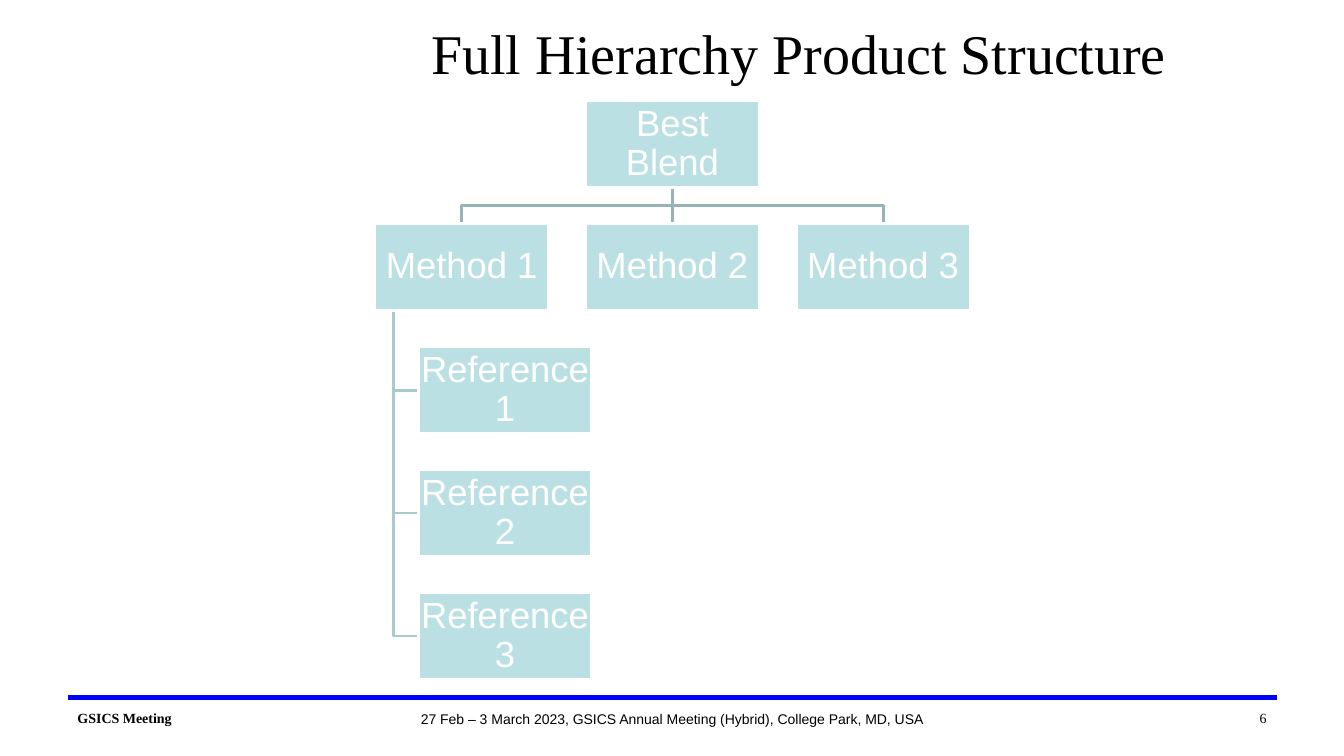
from dataclasses import dataclass

from lxml.etree import SubElement
from pptx import Presentation
from pptx.dml.color import RGBColor
from pptx.enum.shapes import MSO_CONNECTOR as Connector, MSO_SHAPE as Shape
from pptx.enum.text import MSO_ANCHOR as Anchor, PP_ALIGN as Align
from pptx.oxml.ns import qn
from pptx.util import Inches, Pt


@dataclass(frozen=True)
class Theme:
    """Colours, fonts and type sizes of the slide."""
    ink: str = "000000"
    white: str = "FFFFFF"
    box: str = "BBE0E3"
    method_link: str = "96B3B6"
    reference_link: str = "AACBCE"
    rule: str = "0000FF"
    serif: str = "Times New Roman"
    sans: str = "Arial"
    title_size: int = 40
    box_size: int = 26
    footer_size: int = 10
    link_width: int = 2
    rule_width: int = 3


class HierarchySlide:
    """Draws the elements of a hierarchy on one slide."""

    def __init__(self, slide, theme):
        self.shapes = slide.shapes
        self.theme = theme

    def add_words(self, frame, words, size, font, color, align, bold=False):
        frame.word_wrap = True
        frame.vertical_anchor = Anchor.MIDDLE
        paragraph = frame.paragraphs[0]
        paragraph.alignment = align
        run = paragraph.add_run()
        run.text = words
        run.font.size = Pt(size)
        run.font.name = font
        run.font.bold = bold
        run.font.color.rgb = RGBColor.from_string(color)
        return paragraph

    def stroke(self, line, color, width):
        line.color.rgb = RGBColor.from_string(color)
        line.width = Pt(width)

    def label(self, words, left, top, width, height, size, font, align, bold=False):
        area = self.shapes.add_textbox(*map(Inches, (left, top, width, height)))
        self.add_words(area.text_frame, words, size, font, self.theme.ink, align, bold)

    def box(self, words, left, top, width, height):
        node = self.shapes.add_shape(Shape.RECTANGLE, *map(Inches, (left, top, width, height)))
        node.shadow.inherit = False
        node.fill.solid()
        node.fill.fore_color.rgb = RGBColor.from_string(self.theme.box)
        self.stroke(node.line, self.theme.white, self.theme.link_width)
        frame = node.text_frame
        frame.margin_left = frame.margin_right = Inches(0.02)
        frame.margin_top = frame.margin_bottom = Inches(0.02)
        paragraph = self.add_words(frame, words, self.theme.box_size, self.theme.sans,
                                   self.theme.white, Align.CENTER)
        paragraph.line_spacing = 0.9
        return node

    def straight(self, start, end, color, width):
        line = self.shapes.add_connector(Connector.STRAIGHT, *map(Inches, start + end))
        SubElement(line._element.spPr, qn("a:effectLst"))
        self.stroke(line.line, color, width)
        return line

    def bent(self, points, color):
        corners = [(Inches(x), Inches(y)) for x, y in points]
        builder = self.shapes.build_freeform(*corners[0], scale=1.0)
        builder.add_line_segments(corners[1:], close=False)
        link = builder.convert_to_shape()
        link.shadow.inherit = False
        link.fill.background()
        self.stroke(link.line, color, self.theme.link_width)


def main():
    deck = Presentation()
    deck.slide_width, deck.slide_height = Inches(13.33), Inches(7.5)
    theme = Theme()
    page = HierarchySlide(deck.slides.add_slide(deck.slide_layouts[6]), theme)

    page.label("27 Feb – 3 March 2023, GSICS Annual Meeting (Hybrid), College Park, MD, USA",
               3.66, 7.01, 6.01, 0.25, theme.footer_size, theme.sans, Align.CENTER)
    page.straight((0.67, 6.92), (12.67, 6.92), theme.rule, theme.rule_width)
    page.label("GSICS Meeting", 0.67, 7, 3.01, 0.25, theme.footer_size, theme.serif,
               Align.LEFT, bold=True)
    page.label("Full Hierarchy Product Structure", 3.67, 0.15, 8.5, 0.73,
               theme.title_size, theme.serif, Align.CENTER)

    width, height = 1.72, 0.86
    columns = [3.72 + 2.09 * i for i in range(3)]
    rows = [1 + 1.22 * i for i in range(5)]
    reference_left, trunk = 4.15, 3.9
    center = columns[1] + width / 2
    blend_bottom, method_top = rows[0] + height, rows[1]
    method_bottom = method_top + height
    branch = (blend_bottom + method_top) / 2

    for left in (columns[0], columns[2]):
        middle = left + width / 2
        page.bent([(center, blend_bottom), (center, branch), (middle, branch),
                   (middle, method_top)], theme.method_link)
    stem = page.straight((center, blend_bottom), (center, method_top),
                         theme.method_link, theme.link_width)
    for top in rows[2:]:
        middle = top + height / 2
        page.bent([(trunk, method_bottom), (trunk, middle), (reference_left, middle)],
                  theme.reference_link)

    blend = page.box("Best Blend", columns[1], rows[0], width, height)
    methods = [page.box(f"Method {number}", left, method_top, width, height)
               for number, left in enumerate(columns, 1)]
    for number, top in enumerate(rows[2:], 1):
        page.box(f"Reference {number}", reference_left, top, width, height)
    stem.begin_connect(blend, 2)
    stem.end_connect(methods[1], 0)

    page.label("6", 10.67, 7, 1.99, 0.25, theme.footer_size, theme.serif, Align.RIGHT)
    deck.save("out.pptx")


if __name__ == "__main__":
    main()
